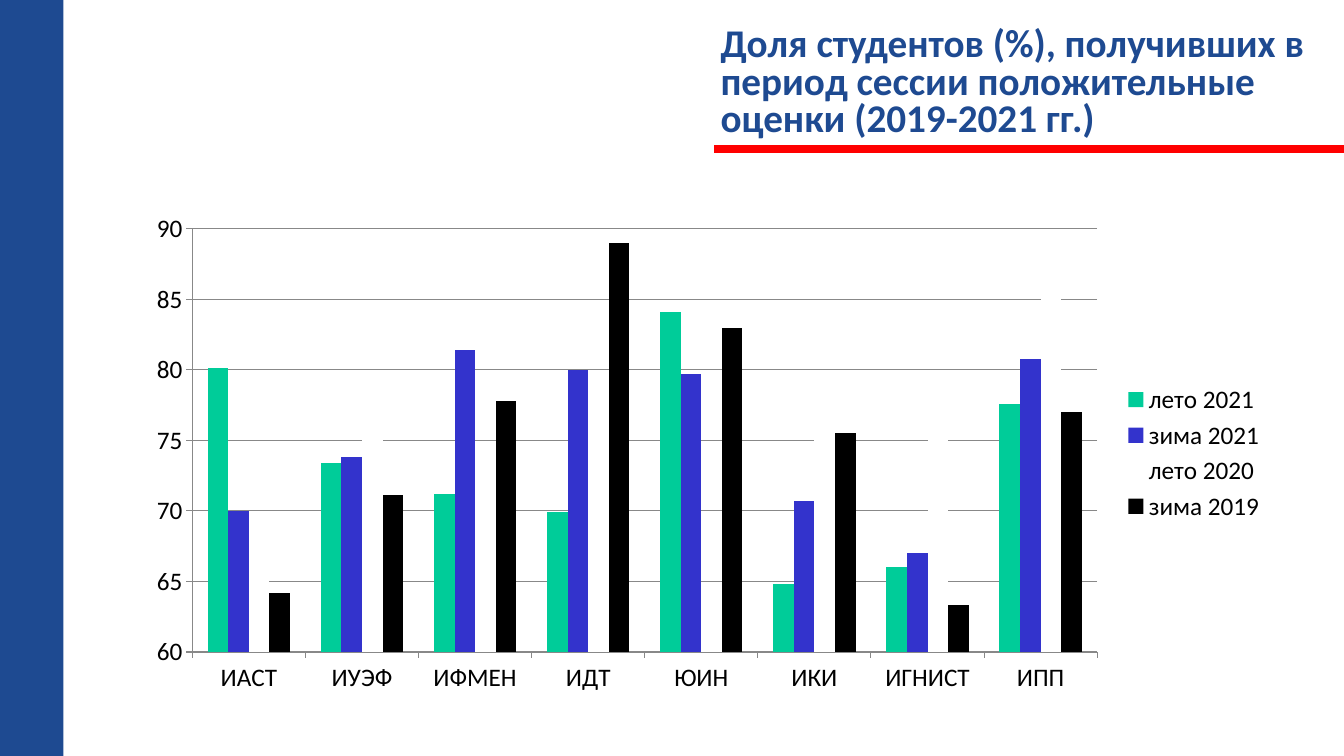
from dataclasses import dataclass
from typing import Any

from lxml import etree
from pptx import Presentation
from pptx import util as u
from pptx.chart.data import CategoryChartData
from pptx.dml.color import RGBColor
from pptx.enum import chart as ch, shapes, text
from pptx.oxml.ns import qn


@dataclass(frozen=True)
class Theme:
    font: str = "Calibri"
    blue: str = "1E4A91"
    red: str = "FF0000"
    ink: str = "000000"
    grid: str = "888888"
    head: int = 28
    label: int = 18


@dataclass(frozen=True)
class Term:
    name: str
    color: str
    shares: tuple[float, ...]


@dataclass(frozen=True)
class Box:
    left: float
    top: float
    width: float
    height: float

    def frame(self) -> tuple[u.Cm, ...]:
        return tuple(u.Cm(n) for n in (self.left, self.top, self.width, self.height))


THEME = Theme()
WIDE, HIGH = 33.88, 19.05
STRIP = Box(0, 0, 1.6, HIGH)
HEAD = Box(17.91, 0.56, 15.39, 3.15)
PLOT = Box(3.38, 5.13, 28.78, 12.57)
RULE_X, RULE_Y = 18.01, 3.76

UNITS = ("ИАСТ", "ИУЭФ", "ИФМЕН", "ИДТ", "ЮИН", "ИКИ", "ИГНИСТ", "ИПП")
TERMS = (
    Term("лето 2021", "00CC99", (80.1, 73.4, 71.2, 69.9, 84.1, 64.8, 66, 77.6)),
    Term("зима 2021", "3333CC", (70, 73.8, 81.4, 80, 79.7, 70.7, 67, 80.8)),
    Term("лето 2020", "FFFFFF", (69.4, 80, 73.8, 76, 63.7, 77.5, 76.3, 87.6)),
    Term("зима 2019", "000000", (64.2, 71.1, 77.8, 89, 83, 75.5, 63.3, 77)),
)


def apply(item: Any, form: dict[str, Any]) -> None:
    for key, value in form.items():
        setattr(item, key, value)


def style(font: Any, size: int, color: str, bold: bool = False) -> None:
    apply(font, {"name": THEME.font, "size": u.Pt(size), "bold": bold})
    font.color.rgb = RGBColor.from_string(color)


def paint(fill: Any, color: str) -> None:
    fill.solid()
    fill.fore_color.rgb = RGBColor.from_string(color)


def draw_rule(slide: Any) -> None:
    y = u.Cm(RULE_Y)
    rule = slide.shapes.add_connector(
        shapes.MSO_CONNECTOR.STRAIGHT, u.Cm(RULE_X), y, u.Cm(WIDE), y)
    rule.line.color.rgb = RGBColor.from_string(THEME.red)
    rule.line.width = u.Pt(6)
    etree.SubElement(rule._element.spPr, qn("a:effectLst"))


def draw_head(slide: Any) -> None:
    head = slide.shapes.title
    apply(head, dict(zip(("left", "top", "width", "height"), HEAD.frame())))
    apply(head.text_frame, {
        "text": "Доля студентов (%), получивших в период сессии "
                "положительные оценки (2019-2021 гг.)",
        "word_wrap": True,
        "auto_size": text.MSO_AUTO_SIZE.NONE,
        "vertical_anchor": text.MSO_ANCHOR.TOP,
    })
    para = head.text_frame.paragraphs[0]
    apply(para, {"alignment": text.PP_ALIGN.LEFT, "line_spacing": 0.8,
                 "space_before": u.Pt(0)})
    style(para.runs[0].font, THEME.head, THEME.blue, True)


def draw_strip(slide: Any) -> None:
    strip = slide.shapes.add_shape(shapes.MSO_SHAPE.RECTANGLE, *STRIP.frame())
    strip.shadow.inherit = False
    paint(strip.fill, THEME.blue)
    strip.line.fill.background()


def draw_chart(slide: Any) -> None:
    data = CategoryChartData()
    data.categories = UNITS
    for term in TERMS:
        data.add_series(term.name, term.shares)
    chart = slide.shapes.add_chart(
        ch.XL_CHART_TYPE.COLUMN_CLUSTERED, *PLOT.frame(), data).chart
    apply(chart, {"has_title": False, "has_legend": True})
    style(chart.font, THEME.label, THEME.ink)
    apply(chart.legend, {"position": ch.XL_LEGEND_POSITION.RIGHT,
                         "include_in_layout": False})

    plot = chart.plots[0]
    apply(plot, {"gap_width": 150, "overlap": 0, "vary_by_categories": False})
    for series, term in zip(plot.series, TERMS):
        series.invert_if_negative = False
        paint(series.format.fill, term.color)

    scale = chart.value_axis
    apply(scale, {"minimum_scale": 60, "maximum_scale": 90, "major_unit": 5,
                  "has_major_gridlines": True})
    for axis in (scale, chart.category_axis):
        axis.major_tick_mark = ch.XL_TICK_MARK.OUTSIDE
        axis.format.line.color.rgb = RGBColor.from_string(THEME.grid)
    scale.major_gridlines.format.line.color.rgb = RGBColor.from_string(THEME.grid)


def main() -> None:
    deck = Presentation()
    apply(deck, {"slide_width": u.Cm(WIDE), "slide_height": u.Cm(HIGH)})
    slide = deck.slides.add_slide(deck.slide_layouts[5])
    for draw in (draw_rule, draw_head, draw_strip, draw_chart):
        draw(slide)
    deck.save("out.pptx")


if __name__ == "__main__":
    main()
